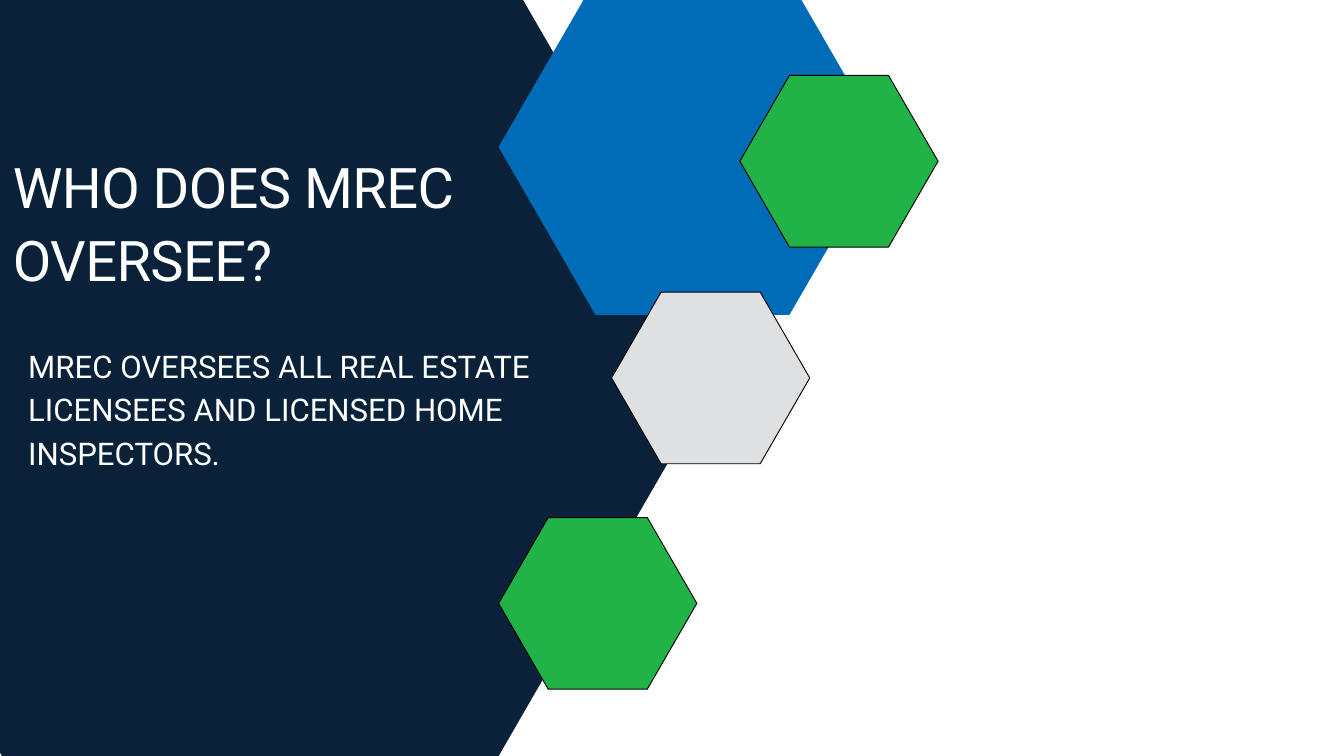
"""Build the slide on who MREC oversees."""
from dataclasses import dataclass
from math import sqrt
from typing import Optional

from pptx import Presentation
from pptx.dml.color import RGBColor as Rgb
from pptx.enum.shapes import MSO_SHAPE as Shape
from pptx.enum.text import MSO_AUTO_SIZE as AutoSize
from pptx.slide import Slide
from pptx.util import Pt

COLOURS = {
    "navy": "0A2239",
    "blue": "006BB7",
    "green": "21B248",
    "grey": "DFE0E1",
    "white": "FFFFFF",
    "black": "000000",
}
FONT = "Roboto"
HEXAGON_RATIO = sqrt(3) / 2
TILE_WIDTH = 212.4


@dataclass
class Hexagon:
    left: float
    top: float
    width: float
    fill: str
    outline: Optional[str] = None


@dataclass
class Caption:
    text: str
    left: float
    top: float
    width: float
    height: float
    size: float
    leading: float
    tracking: float = 0


BACKDROPS = [
    Hexagon(-244.8, -61.92, 1026, "navy"),
    Hexagon(534.24, -22.32, 415.44, "blue"),
]
TILES = [
    Hexagon(792.72, 80.8, TILE_WIDTH, "green", "black"),
    Hexagon(655.2, 313, TILE_WIDTH, "grey", "black"),
    Hexagon(534.24, 554.5, TILE_WIDTH, "green", "black"),
]
CAPTIONS = [
    Caption("MREC OVERSEES ALL REAL ESTATE LICENSEES AND LICENSED HOME INSPECTORS.",
            30.24, 365.04, 575.28, 138.24, 33.4, 46.8),
    Caption("WHO DOES MREC OVERSEE?",
            13.68, 157.68, 481.68, 155.52, 60, 78, -0.6),
]


def colour(name: str) -> Rgb:
    """Return the named palette colour."""
    return Rgb.from_string(COLOURS[name])


def draw_hexagon(page: Slide, item: Hexagon) -> None:
    """Draw a regular hexagon with flat top and bottom."""
    shape = page.shapes.add_shape(
        Shape.HEXAGON, Pt(item.left), Pt(item.top),
        Pt(item.width), Pt(item.width * HEXAGON_RATIO))
    shape.adjustments[0] = 0.25 / HEXAGON_RATIO
    shape.shadow.inherit = False
    shape.fill.solid()
    shape.fill.fore_color.rgb = colour(item.fill)
    if item.outline:
        shape.line.color.rgb = colour(item.outline)
        shape.line.width = Pt(1)
    else:
        shape.line.fill.background()


def draw_caption(page: Slide, item: Caption) -> None:
    """Draw a wrapped white text box without insets."""
    box = page.shapes.add_textbox(
        Pt(item.left), Pt(item.top), Pt(item.width), Pt(item.height))
    frame = box.text_frame
    frame.word_wrap = True
    frame.auto_size = AutoSize.SHAPE_TO_FIT_TEXT
    frame.margin_left = frame.margin_right = Pt(0)
    frame.margin_top = frame.margin_bottom = Pt(0)
    para = frame.paragraphs[0]
    para.line_spacing = Pt(item.leading)
    span = para.add_run()
    span.text = item.text
    para.font.name = FONT
    para.font.size = Pt(item.size)
    para.font.color.rgb = colour("white")
    if item.tracking:
        span.font._element.set("spc", str(round(item.tracking * 100)))


def main() -> None:
    """Assemble and save the deck."""
    deck = Presentation()
    deck.slide_width, deck.slide_height = Pt(1440), Pt(810)
    page = deck.slides.add_slide(deck.slide_layouts[6])
    for item in BACKDROPS:
        draw_hexagon(page, item)
    for item in CAPTIONS:
        draw_caption(page, item)
    for item in TILES:
        draw_hexagon(page, item)
    deck.save("out.pptx")


if __name__ == "__main__":
    main()
